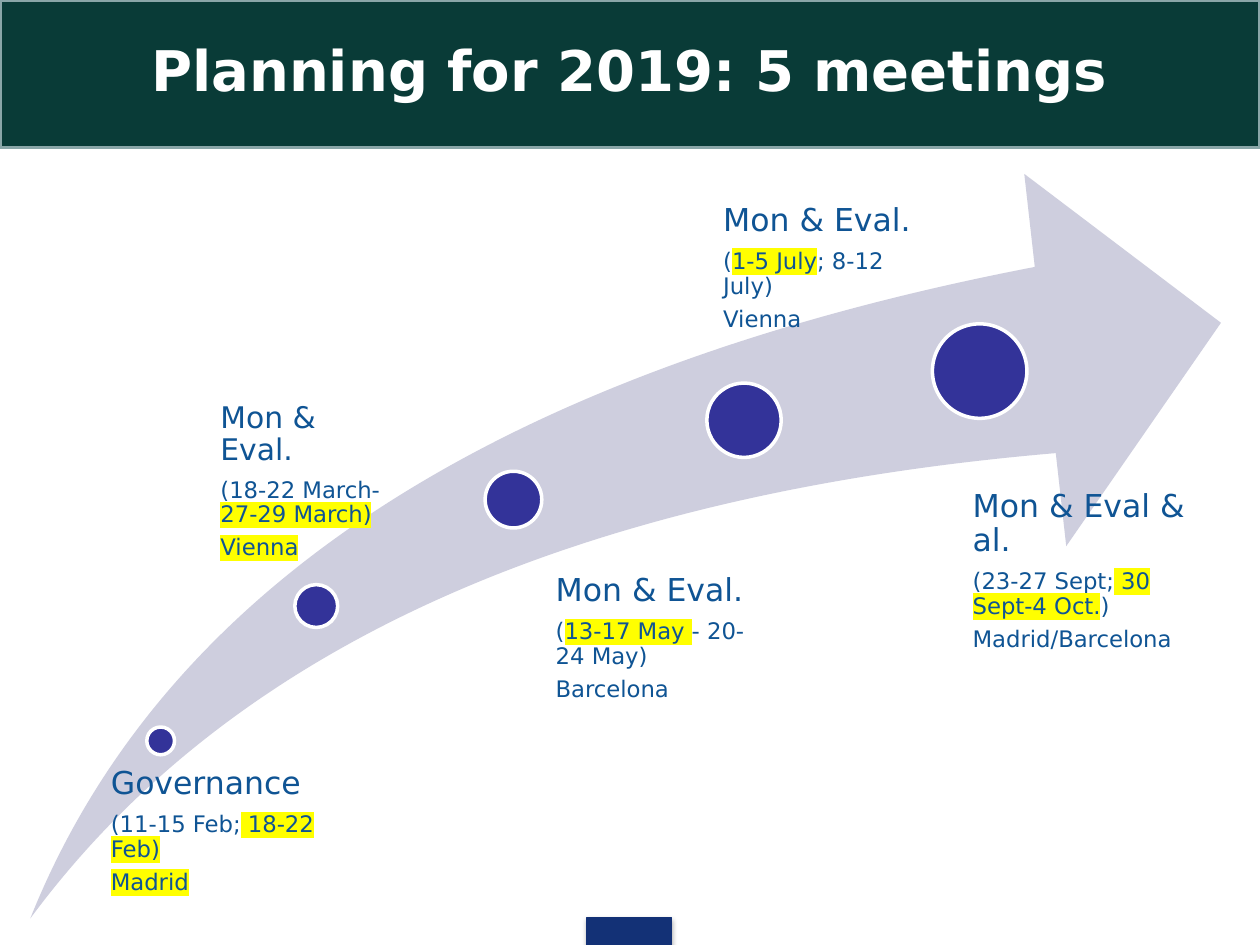
from dataclasses import dataclass

from lxml.etree import SubElement
from pptx import Presentation
from pptx.dml.color import RGBColor
from pptx.enum.shapes import MSO_SHAPE
from pptx.enum.text import MSO_ANCHOR, PP_ALIGN
from pptx.oxml import parse_xml
from pptx.oxml.ns import qn
from pptx.util import Inches, Pt

TITLE = "Planning for 2019: 5 meetings"

# Each meeting: name, date runs, city runs; a run is (text, highlighted).
# Dot is (left, top, diameter); label is (left, top, width, left inset), in grid units.
MEETINGS = [
    {"name": "Governance", "dot": (11.65, 57.7, 2.2), "label": (7.6, 60.9, 17.5, 1.2),
     "dates": [("(11-15 Feb;", False), (" 18-22 Feb)", True)],
     "city": [("Madrid", True)]},
    {"name": "Mon & Eval.", "dot": (23.4, 46.4, 3.4), "label": (15.7, 32, 15.7, 1.8),
     "dates": [("(18-22 March- ", False), ("27-29 March)", True)],
     "city": [("Vienna", True)], "name_size": 17},
    {"name": "Mon & Eval.", "dot": (38.5, 37.4, 4.5), "label": (41.7, 45.6, 18.2, 2.4),
     "dates": [("(", False), ("13-17 May ", True), ("- 20-24 May)", False)],
     "city": [("Barcelona", False)]},
    {"name": "Mon & Eval.", "dot": (56.1, 30.4, 5.9), "label": (54.3, 16.2, 18.9, 3.1),
     "dates": [("(", False), ("1-5 July", True), ("; 8-12 July)", False)],
     "city": [("Vienna", False)]},
    {"name": "Mon & Eval & al.", "dot": (74, 25.7, 7.5), "label": (73.2, 38.9, 23.6, 4),
     "dates": [("(23-27 Sept;", False), (" 30 Sept-4 Oct.", True), (")", False)],
     "city": [("Madrid/Barcelona", False)]},
]


@dataclass(frozen=True)
class Theme:
    font: str = "DejaVu Sans"
    banner: str = "093B37"
    banner_edge: str = "8AA6A8"
    white: str = "FFFFFF"
    arrow: str = "CECEDE"
    dot: str = "333399"
    text: str = "0F5494"
    tab: str = "133176"
    highlight: str = "FFFF00"
    title_size: int = 32
    name_size: int = 18
    detail_size: int = 13
    line_spacing: float = 0.9
    gap_share: float = 0.37  # paragraph gap as a share of the type size


THEME = Theme()
COLUMNS, ROWS = 100, 75
CELL = Inches(10) // COLUMNS
LABEL_HEIGHT = 14


def cells(*lengths):
    return [round(length * CELL) for length in lengths]


def add_block(slide, kind, box, fill, edge=None, edge_width=2):
    shape = slide.shapes.add_shape(kind, *cells(*box))
    shape.shadow.inherit = False
    shape.fill.solid()
    shape.fill.fore_color.rgb = RGBColor.from_string(fill)
    if edge:
        shape.line.color.rgb = RGBColor.from_string(edge)
        shape.line.width = Pt(edge_width)
    else:
        shape.line.fill.background()
    return shape


def format_run(run, size, color, bold=False, highlighted=False):
    run.font.name = THEME.font
    run.font.size = Pt(size)
    run.font.bold = bold
    run.font.color.rgb = RGBColor.from_string(color)
    if highlighted:
        properties = run._r.get_or_add_rPr()
        highlight = SubElement(properties, qn("a:highlight"))
        SubElement(highlight, qn("a:srgbClr"), val=THEME.highlight)
        properties.find(qn("a:solidFill")).addnext(highlight)


def add_label(slide, meeting):
    left, top, width, inset = meeting["label"]
    text_box = slide.shapes.add_textbox(*cells(left, top, width, LABEL_HEIGHT))
    text_frame = text_box.text_frame
    text_frame.word_wrap = True
    text_frame.margin_left = cells(inset)[0]
    text_frame.margin_top = text_frame.margin_right = text_frame.margin_bottom = 0
    lines = [
        ([(meeting["name"], False)], meeting.get("name_size", THEME.name_size)),
        (meeting["dates"], THEME.detail_size),
        (meeting["city"], THEME.detail_size),
    ]
    for index, (runs, size) in enumerate(lines):
        paragraph = text_frame.add_paragraph() if index else text_frame.paragraphs[0]
        paragraph.line_spacing = THEME.line_spacing
        paragraph.space_after = Pt(size * THEME.gap_share)
        for text, highlighted in runs:
            run = paragraph.add_run()
            run.text = text
            format_run(run, size, THEME.text, highlighted=highlighted)


def add_soft_shadow(shape):
    effects = shape._element.spPr.find(qn("a:effectLst"))
    effects.append(parse_xml(
        '<a:outerShdw xmlns:a="http://schemas.openxmlformats.org/drawingml/2006/main"'
        ' blurRad="39370" dist="22860" dir="5400000" rotWithShape="0">'
        '<a:srgbClr val="000000"><a:alpha val="35000"/></a:srgbClr></a:outerShdw>'))


def main():
    presentation = Presentation()
    presentation.slide_width, presentation.slide_height = cells(COLUMNS, ROWS)
    slide = presentation.slides.add_slide(presentation.slide_layouts[6])

    # Footer tab
    tab = add_block(slide, MSO_SHAPE.RECTANGLE, (46.6, 72.8, 6.7, 2.2),
                    THEME.tab, THEME.tab, 0.75)
    add_soft_shadow(tab)

    # Title banner
    banner = add_block(slide, MSO_SHAPE.RECTANGLE, (0, 0, COLUMNS, 11.7),
                       THEME.banner, THEME.banner_edge)
    text_frame = banner.text_frame
    text_frame.text = TITLE
    text_frame.word_wrap = True
    text_frame.vertical_anchor = MSO_ANCHOR.MIDDLE
    paragraph = text_frame.paragraphs[0]
    paragraph.alignment = PP_ALIGN.CENTER
    paragraph.line_spacing = THEME.line_spacing
    format_run(paragraph.runs[0], THEME.title_size, THEME.white, bold=True)

    # Rising arrow
    arrow = add_block(slide, MSO_SHAPE.SWOOSH_ARROW, (2.4, 13.8, 94.5, 59.1), THEME.arrow)
    arrow.adjustments[0] = arrow.adjustments[1] = 0.25

    # Meetings along the arrow
    for meeting in MEETINGS:
        left, top, diameter = meeting["dot"]
        add_block(slide, MSO_SHAPE.OVAL, (left, top, diameter, diameter),
                  THEME.dot, THEME.white)
        add_label(slide, meeting)

    presentation.save("out.pptx")


if __name__ == "__main__":
    main()
